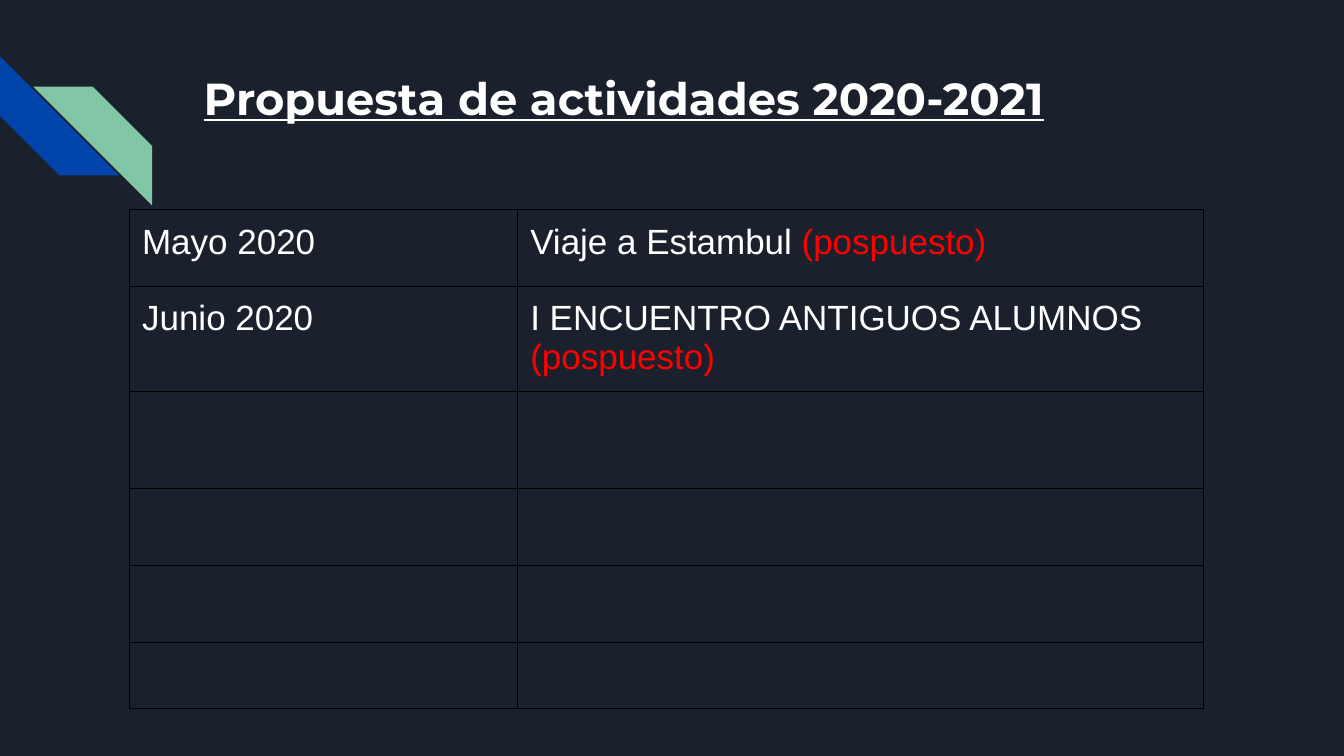
from lxml import etree
from pptx import Presentation
from pptx import util as u
from pptx.dml.color import RGBColor
from pptx.enum import shapes, text
from pptx.oxml import ns

PAD = u.Inches(0.13)
WHITE, RED = "FFFFFF", "FF0000"


def paint(color, hue):
    """Set a fill's or font's color from a hex string."""
    color.rgb = RGBColor.from_string(hue)


def edge(cell):
    """Draw a thin black line on all four sides of a cell."""
    props = cell._tc.get_or_add_tcPr()
    for i, side in enumerate(("lnL", "lnR", "lnT", "lnB")):
        line = etree.Element(ns.qn("a:" + side), w=str(u.Pt(0.75)))
        fill = etree.SubElement(line, ns.qn("a:solidFill"))
        etree.SubElement(fill, ns.qn("a:srgbClr"), val="000000")
        props.insert(i, line)


deck = Presentation()
deck.slide_width, deck.slide_height = u.Inches(13.33), u.Inches(7.5)
slide = deck.slides.add_slide(deck.slide_layouts[5])
back = slide.background.fill
back.solid()
paint(back.fore_color, "1B212C")

# Corner stripes
size = u.Inches(1.18)
for left, top, turn, hue in ((0, 0.56, 270, "0145AC"), (0.33, 0.86, 90, "82C7A5")):
    stripe = slide.shapes.add_shape(
        shapes.MSO_SHAPE.DIAGONAL_STRIPE, u.Inches(left), u.Inches(top), size, size)
    stripe.rotation = turn
    stripe.shadow.inherit = False
    stripe.fill.solid()
    paint(stripe.fill.fore_color, hue)
    stripe.line.fill.background()

# Title
title = slide.shapes.title
title.left, title.top = u.Inches(1.89), u.Inches(0.57)
title.width, title.height = u.Inches(10.26), u.Inches(1.33)
frame = title.text_frame
frame.text = "Propuesta de actividades 2020-2021"
frame.auto_size = text.MSO_AUTO_SIZE.NONE
frame.vertical_anchor = text.MSO_ANCHOR.TOP
frame.margin_left = frame.margin_right = frame.margin_top = frame.margin_bottom = PAD
head = frame.paragraphs[0]
head.alignment = text.PP_ALIGN.LEFT
head.font.name, head.font.size = "Montserrat", u.Pt(32)
head.font.bold = head.font.underline = True
paint(head.font.color, WHITE)

# Table of activities: each cell is a list of (words, color) runs
late = ("(pospuesto)", RED)
plans = [
    [[("Mayo 2020", WHITE)], [("Viaje a Estambul ", WHITE), late]],
    [[("Junio 2020", WHITE)], [("I ENCUENTRO ANTIGUOS ALUMNOS ", WHITE), late]],
] + [[[], []]] * 4
widths = (3.85, 6.81)
heights = (0.76, 1.04, 0.97, 0.76, 0.76, 0.66)

table = slide.shapes.add_table(
    len(heights), len(widths), u.Inches(1.28), u.Inches(2.08),
    u.Inches(sum(widths)), u.Inches(sum(heights))).table
table.first_row = table.horz_banding = False
for col, width in zip(table.columns, widths):
    col.width = u.Inches(width)
for row, height, plan in zip(table.rows, heights, plans):
    row.height = u.Inches(height)
    for cell, runs in zip(row.cells, plan):
        cell.fill.background()
        cell.margin_left = cell.margin_right = PAD
        cell.margin_top = cell.margin_bottom = PAD
        edge(cell)
        para = cell.text_frame.paragraphs[0]
        if runs:
            para.font.name, para.font.size = "Arial", u.Pt(25)
        for words, hue in runs:
            run = para.add_run()
            run.text = words
            paint(run.font.color, hue)

deck.save("out.pptx")
